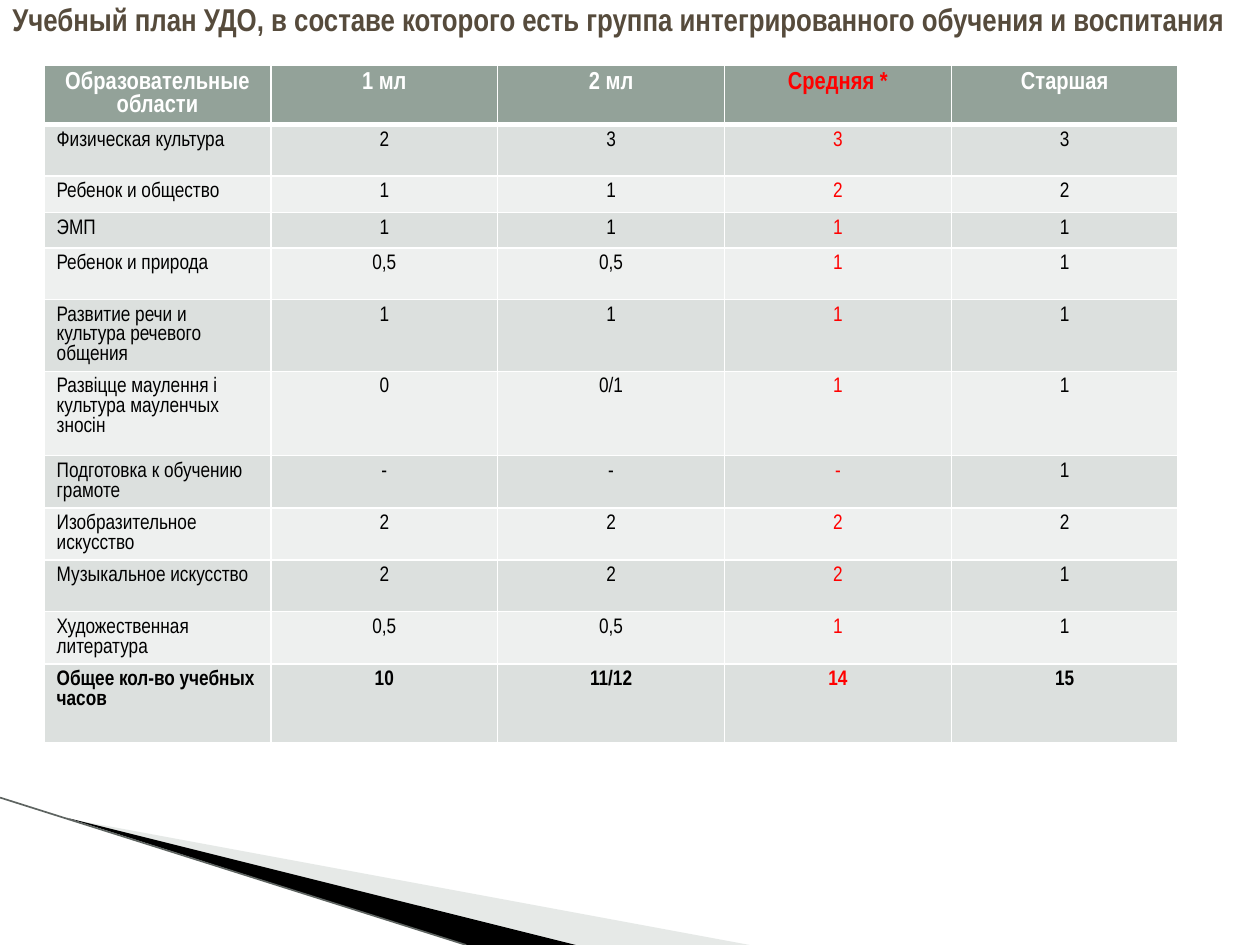
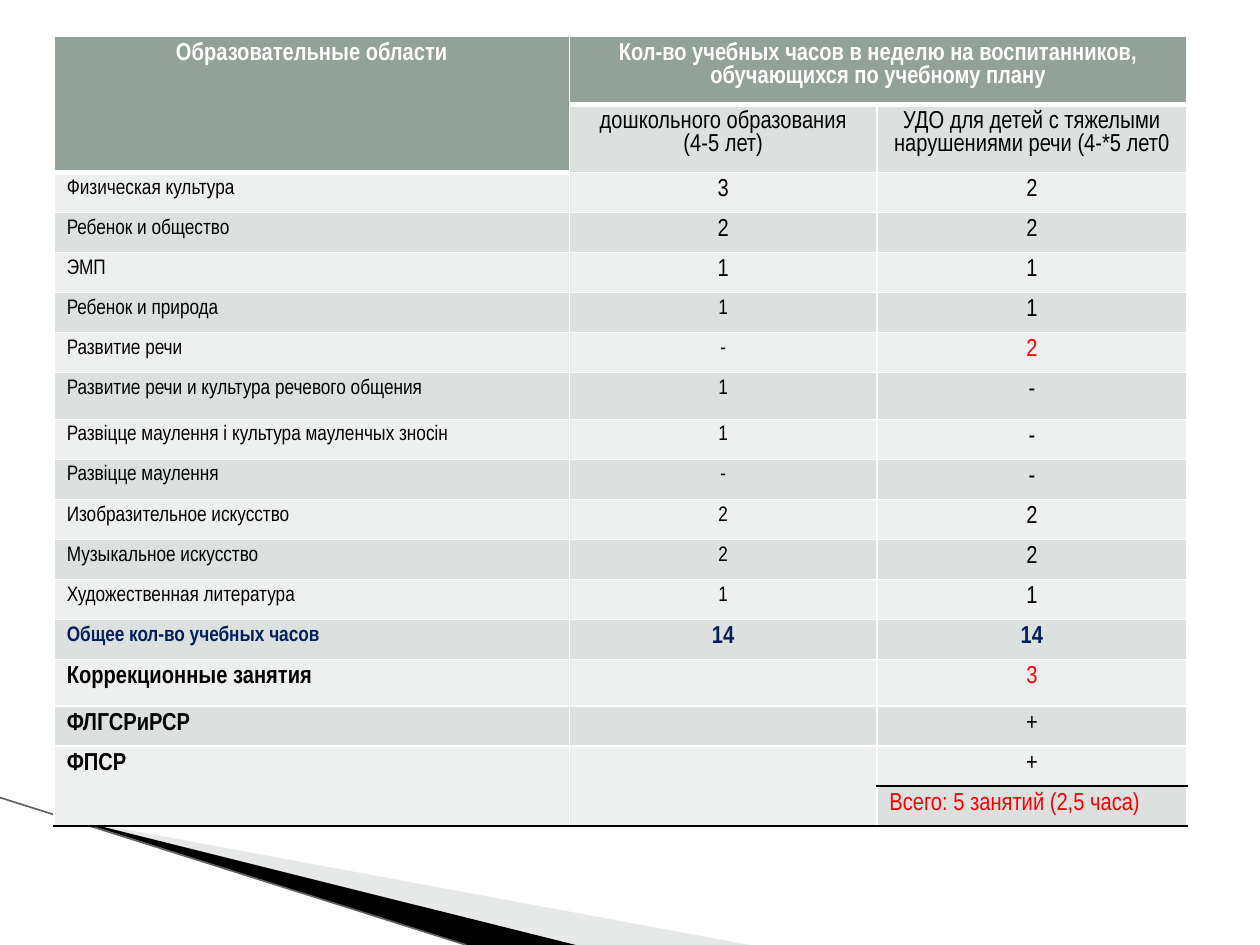
from lxml import etree
from pptx import Presentation
from pptx import util as u
from pptx.dml.color import RGBColor
from pptx.enum import shapes, text
from pptx.oxml.ns import qn

FONT = "Arial Narrow"
WHITE, BLACK, RED, NAVY, BROWN = "FFFFFF", "000000", "FF0000", "002060", "564B3C"
HEAD, ODD, EVEN = "93A299", "DCE0DE", "EEF0EF"
WEDGE, EDGE = "C1CAC5", "5E6461"
WIDE, HIGH = 100, 75  # grid columns and rows on a slide


def tint(code):
    return RGBColor.from_string(code)


class Deck:
    def __init__(self):
        self.prs = Presentation()
        self.prs.slide_width, self.prs.slide_height = u.Inches(10), u.Inches(7.5)
        self.unit = self.prs.slide_width / WIDE

    def grid(self, *cells):
        return [u.Emu(round(n * self.unit)) for n in cells]

    def page(self):
        self.slide = self.prs.slides.add_slide(self.prs.slide_layouts[6])
        # Corner wedges and the line along them
        self.wedge([(5.5, 65), (59.5, HIGH), (45.6, HIGH)], WEDGE, 40)
        self.wedge([(5.3, 64.9), (45.7, HIGH), (37, HIGH)], BLACK)
        self.line((0, 63.3), (37, HIGH), EDGE, 0.95)

    def wedge(self, spots, color, alpha=None):
        first, *rest = [self.grid(*spot) for spot in spots]
        path = self.slide.shapes.build_freeform(*first, scale=1)
        path.add_line_segments(rest, close=True)
        shape = path.convert_to_shape()
        shape.shadow.inherit = False
        shape.line.fill.background()
        shape.fill.solid()
        shape.fill.fore_color.rgb = tint(color)
        if alpha:
            node = shape.fill._xPr.find(".//" + qn("a:srgbClr"))
            etree.SubElement(node, qn("a:alpha"), val=str(alpha * 1000))

    def line(self, start, end, color, width):
        link = self.slide.shapes.add_connector(
            shapes.MSO_CONNECTOR.STRAIGHT, *self.grid(*start, *end))
        link.line.color.rgb = tint(color)
        link.line.width = u.Pt(width)
        etree.SubElement(link._element.spPr, qn("a:effectLst"))

    def style(self, para, size, color, bold, mid=False):
        para.alignment = text.PP_ALIGN.CENTER if mid else text.PP_ALIGN.LEFT
        font = para.font
        font.name, font.size, font.bold = FONT, u.Pt(size), bold
        font.color.rgb = tint(color)

    def title(self, words):
        frame = self.slide.shapes.add_textbox(*self.grid(0, 0, WIDE, 3)).text_frame
        frame.word_wrap = True
        frame.margin_top = frame.margin_bottom = 0
        frame.vertical_anchor = text.MSO_ANCHOR.MIDDLE
        frame.text = words
        self.style(frame.paragraphs[0], 18, BROWN, True)

    def border(self, cell, side, color, width):
        line = etree.SubElement(cell._tc.get_or_add_tcPr(), qn("a:ln" + side),
                                w=str(u.Pt(width)))
        fill = etree.SubElement(line, qn("a:solidFill"))
        etree.SubElement(fill, qn("a:srgbClr"), val=color)

    def table(self, left, top, cols, rows, data, look, rule, spans=()):
        """look gives size, colour, bold, centred; rule gives the line under a cell."""
        table = self.slide.shapes.add_table(
            len(rows), len(cols), *self.grid(left, top, sum(cols), sum(rows))).table
        for col, width in zip(table.columns, self.grid(*cols)):
            col.width = width
        for row, height in zip(table.rows, self.grid(*rows)):
            row.height = height
        for r, line in enumerate(data):
            for c, words in enumerate(line):
                cell = table.cell(r, c)
                cell.text = words
                for para in cell.text_frame.paragraphs:
                    self.style(para, *look(r, c))
                    if not words:
                        etree.SubElement(para._p, qn("a:endParaRPr"), sz="1200")
                self.border(cell, "L", WHITE, 1)
                self.border(cell, "R", WHITE, 1)
                self.border(cell, "T", *(rule(r - 1, c) if r else (WHITE, 1)))
                self.border(cell, "B", *rule(r, c))
                cell.fill.solid()
                cell.fill.fore_color.rgb = tint(
                    HEAD if r == 0 else ODD if r % 2 else EVEN)
        for start, end in spans:
            table.cell(*start).merge(table.cell(*end))


# Weekly hours by age group
PLAN = [
    ("Образовательные области", "1 мл", "2 мл", "Средняя *", "Старшая"),
    ("Физическая культура", "2", "3", "3", "3"),
    ("Ребенок и общество", "1", "1", "2", "2"),
    ("ЭМП", "1", "1", "1", "1"),
    ("Ребенок и природа", "0,5", "0,5", "1", "1"),
    ("Развитие речи и культура речевого общения", "1", "1", "1", "1"),
    ("Развіцце маулення і культура мауленчых зносін", "0", "0/1", "1", "1"),
    ("Подготовка к обучению грамоте", "-", "-", "-", "1"),
    ("Изобразительное искусство", "2", "2", "2", "2"),
    ("Музыкальное искусство", "2", "2", "2", "1"),
    ("Художественная литература", "0,5", "0,5", "1", "1"),
    ("Общее кол-во учебных часов", "10", "11/12", "14", "15"),
]

# Weekly hours by kind of plan
HOURS = [
    ("Образовательные области",
     "Кол-во учебных часов в неделю на воспитанников, обучающихся по учебному плану", ""),
    ("", "дошкольного образования\n(4-5 лет)",
     "УДО для детей с тяжелыми нарушениями речи (4-*5 лет0"),
    ("Физическая культура", "3", "2"),
    ("Ребенок и общество", "2", "2"),
    ("ЭМП", "1", "1"),
    ("Ребенок и природа", "1", "1"),
    ("Развитие речи", "-", "2"),
    ("Развитие речи и культура речевого общения", "1", "-"),
    ("Развіцце маулення і культура мауленчых зносін", "1", "-"),
    ("Развіцце маулення", "-", "-"),
    ("Изобразительное искусство", "2", "2"),
    ("Музыкальное искусство", "2", "2"),
    ("Художественная литература", "1", "1"),
    ("Общее кол-во учебных часов", "14", "14"),
    ("Коррекционные занятия", "", "3"),
    ("ФЛГСРиРСР", "", "+"),
    ("ФПСР", "", "+"),
    ("", "", "Всего: 5 занятий (2,5 часа)"),
]
TOTAL, LAST = 13, 17  # rows of HOURS


def plan_look(r, c):
    color = RED if c == 3 else BLACK if r else WHITE
    return 12 if r else 14, color, r in (0, len(PLAN) - 1), r == 0 or c > 0


def plan_rule(r, c):
    return WHITE, 1 if r else 3


def hours_look(r, c):
    small = (c == 0 and 2 <= r <= TOTAL) or (c == 1 and 5 <= r < TOTAL)
    color = WHITE if r == 0 else NAVY if r == TOTAL else BLACK
    if c == 2 and r in (6, 14, LAST):
        color = RED
    bold = r in (0, TOTAL) or (c == 0 and r > TOTAL)
    return 12 if small else 14, color, bold, r == 0 or (c > 0 and r < LAST)


def hours_rule(r, c):
    if r >= LAST - 1:
        return BLACK, 1
    return WHITE, 3 if r == 0 or (r, c) == (1, 0) else 1


def main():
    deck = Deck()

    # Plan with an integrated group
    deck.page()
    deck.table(3.5, 5.2, [18] * 5,
               [4.6, 4.1, 2.9, 2.8, 4.1, 5.7, 6.7, 4.1, 4.1, 4.1, 4.1, 6.3],
               PLAN, plan_look, plan_rule)
    deck.title("Учебный план УДО, в составе которого есть группа "
               "интегрированного обучения и воспитания")

    # Two plans side by side
    deck.page()
    rows = [5.4] * 2 + [3.18] * 16
    rows[7] = rows[14] = 3.7
    deck.table(4.3, 2.9, [40.9, 24.4, 24.6], rows, HOURS, hours_look, hours_rule,
               [((0, 0), (1, 0)), ((0, 1), (0, 2)),
                ((16, 0), (17, 0)), ((16, 1), (17, 1))])

    deck.prs.save("out.pptx")


if __name__ == "__main__":
    main()
